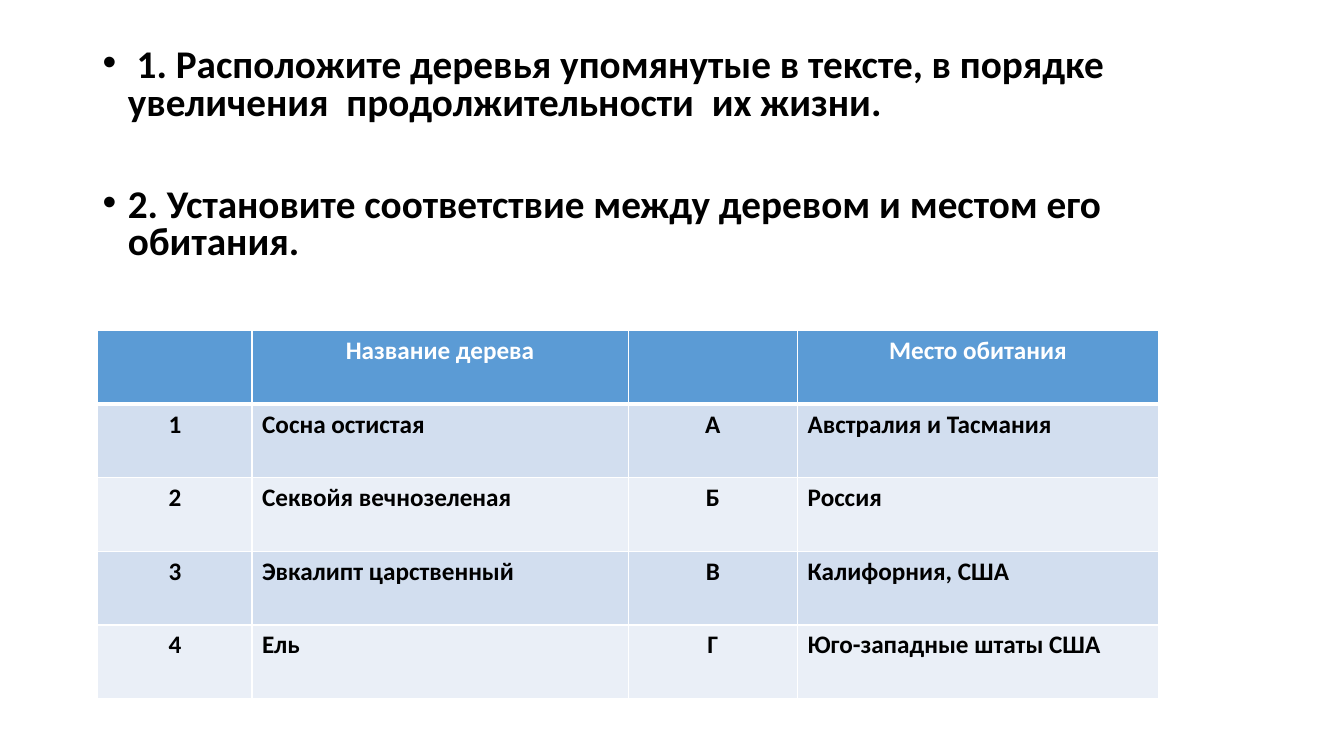
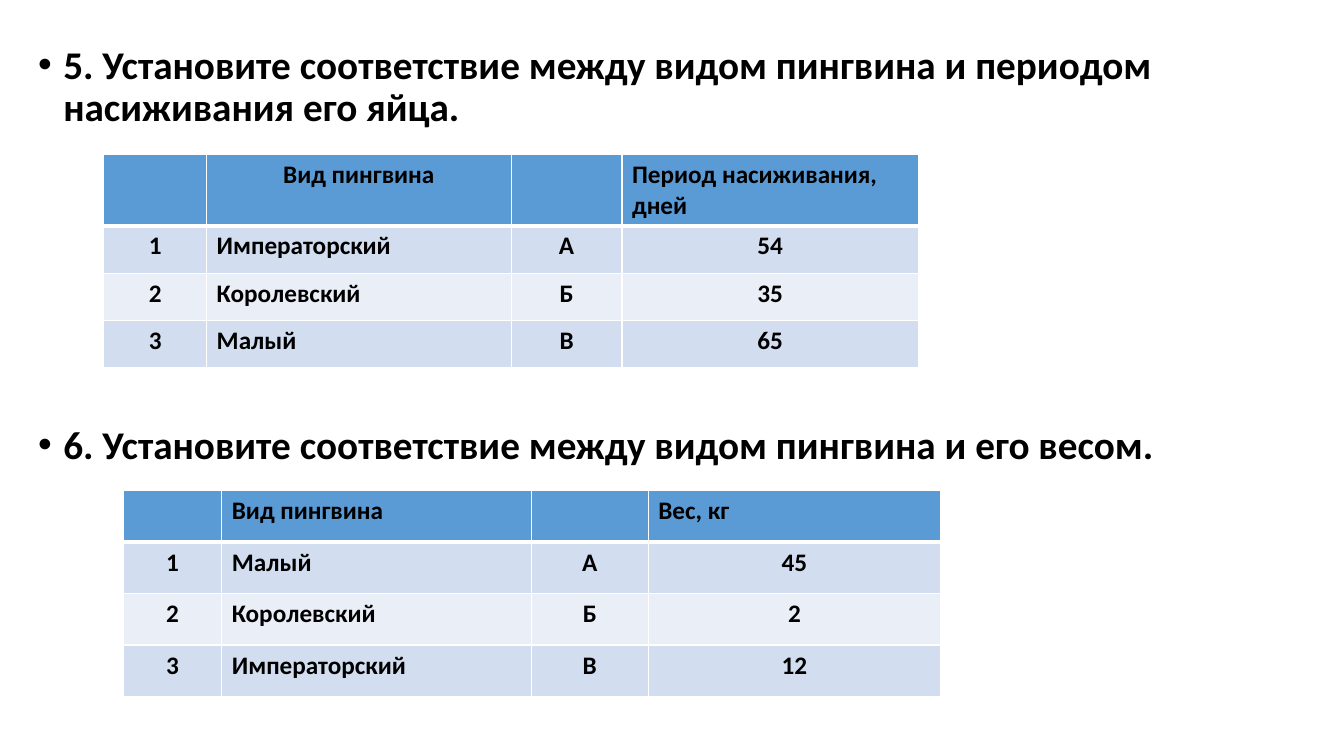
"""Build two quiz slides that match trees and penguins with their facts."""
import dataclasses

import lxml.etree
import pptx
import pptx.dml.color
import pptx.enum.text
import pptx.oxml.ns
import pptx.util

Inches = pptx.util.Inches
Pt = pptx.util.Pt
ALIGN = {
    "l": pptx.enum.text.PP_ALIGN.LEFT,
    "c": pptx.enum.text.PP_ALIGN.CENTER,
}


@dataclasses.dataclass(frozen=True)
class Theme:
    font: str = "Calibri"
    bullet_font: str = "Arial"
    text: str = "000000"
    white: str = "FFFFFF"
    header: str = "5B9BD5"
    bands: tuple = ("D2DEEF", "EAEFF7")
    task_size: int = 28
    cell_size: int = 18
    grid_width: int = 1
    header_rule_width: int = 3


def add_element(parent, tag, **attributes):
    return lxml.etree.SubElement(parent, pptx.oxml.ns.qn(tag), **attributes)


class QuizDeck:
    def __init__(self, theme):
        self.theme = theme
        self.deck = pptx.Presentation()
        self.deck.slide_width = Inches(13.33)
        self.deck.slide_height = Inches(7.5)
        self.page = None

    def add_page(self):
        self.page = self.deck.slides.add_slide(self.deck.slide_layouts[6])

    def style_text(self, paragraph, size, color):
        for span in paragraph.runs:
            span.font.name = self.theme.font
            span.font.size = Pt(size)
            span.font.bold = True
            span.font.color.rgb = pptx.dml.color.RGBColor.from_string(color)

    def add_bullet(self, paragraph):
        properties = paragraph._p.get_or_add_pPr()
        properties.set("marL", str(Inches(0.25)))
        properties.set("indent", str(Inches(-0.25)))
        add_element(properties, "a:buFont", typeface=self.theme.bullet_font)
        add_element(properties, "a:buChar", char="•")

    def add_tasks(self, left, top, width, height, tasks, line_spacing, gap):
        box = self.page.shapes.add_textbox(
            Inches(left), Inches(top), Inches(width), Inches(height))
        frame = box.text_frame
        frame.word_wrap = True
        for index, task in enumerate(tasks):
            para = frame.add_paragraph() if index else frame.paragraphs[0]
            para.text = task
            para.line_spacing = line_spacing
            para.space_before = Pt(gap if index else 0)
            self.add_bullet(para)
            self.style_text(para, self.theme.task_size, self.theme.text)

    def add_borders(self, cell, top, bottom):
        grid = self.theme.grid_width
        properties = cell._tc.get_or_add_tcPr()
        for side, width in (("L", grid), ("R", grid), ("T", top), ("B", bottom)):
            line = add_element(properties, f"a:ln{side}", w=str(Pt(width)))
            fill = add_element(line, "a:solidFill")
            add_element(fill, "a:srgbClr", val=self.theme.white)

    def add_cell(self, cell, text, row, align, color):
        theme = self.theme
        top = theme.header_rule_width if row == 1 else theme.grid_width
        bottom = theme.header_rule_width if row == 0 else theme.grid_width
        self.add_borders(cell, top, bottom)
        fill = theme.bands[(row - 1) % 2] if row else theme.header
        cell.fill.solid()
        cell.fill.fore_color.rgb = pptx.dml.color.RGBColor.from_string(fill)
        cell.text_frame.text = text
        para = cell.text_frame.paragraphs[0]
        para.alignment = ALIGN[align]
        self.style_text(para, theme.cell_size, color)

    def add_matching_table(self, left, top, widths, header_height, row_height,
                           rows, header_align, body_align, header_color):
        heights = [header_height] + [row_height] * (len(rows) - 1)
        table = self.page.shapes.add_table(
            len(rows), len(widths), Inches(left), Inches(top),
            Inches(sum(widths)), Inches(sum(heights))).table
        for column, width in zip(table.columns, widths):
            column.width = Inches(width)
        for row, (texts, height) in enumerate(zip(rows, heights)):
            table.rows[row].height = Inches(height)
            aligns = body_align if row else header_align
            color = self.theme.text if row else header_color
            for column, (text, align) in enumerate(zip(texts, aligns)):
                self.add_cell(table.cell(row, column), text, row, align, color)

    def save(self):
        self.deck.save("out.pptx")


def build_trees(quiz):
    quiz.add_page()
    quiz.add_tasks(
        0.92, 0.43, 11.5, 2.45,
        [" 1. Расположите деревья упомянутые в тексте, в порядке "
         "увеличения  продолжительности  их жизни.",
         "2. Установите соответствие между деревом и местом его обитания."],
        line_spacing=0.8, gap=46)
    quiz.add_matching_table(
        0.97, 3.28, (1.53, 3.73, 1.68, 3.58), 0.73, 0.73,
        [("", "Название дерева", "", "Место обитания"),
         ("1", "Сосна остистая", "А", "Австралия и Тасмания"),
         ("2", "Секвойя вечнозеленая", "Б", "Россия"),
         ("3", "Эвкалипт царственный", "В", "Калифорния, США"),
         ("4", "Ель", "Г", "Юго-западные штаты США")],
        header_align="cccc", body_align="clcl",
        header_color=quiz.theme.white)


def build_penguins(quiz):
    quiz.add_page()
    quiz.add_tasks(
        0.28, 0.4, 12.84, 6.79,
        ["5. Установите соответствие между видом пингвина и периодом "
         "насиживания его яйца.",
         "6. Установите соответствие между видом пингвина и его весом."],
        line_spacing=0.9, gap=211)
    quiz.add_matching_table(
        1.03, 1.53, (1.02, 3.02, 1.1, 2.94), 0.71, 0.47,
        [("", "Вид пингвина", "", "Период насиживания, дней"),
         ("1", "Императорский", "А", "54"),
         ("2", "Королевский", "Б", "35"),
         ("3", "Малый", "В", "65")],
        header_align="cccl", body_align="clcc",
        header_color=quiz.theme.text)
    quiz.add_matching_table(
        1.22, 4.87, (0.98, 3.07, 1.16, 2.9), 0.51, 0.51,
        [("", "Вид пингвина", "", "Вес, кг"),
         ("1", "Малый", "А", "45"),
         ("2", "Королевский", "Б", "2"),
         ("3", "Императорский", "В", "12")],
        header_align="clcl", body_align="clcc",
        header_color=quiz.theme.text)


def main():
    quiz = QuizDeck(Theme())
    build_trees(quiz)
    build_penguins(quiz)
    quiz.save()


if __name__ == "__main__":
    main()
